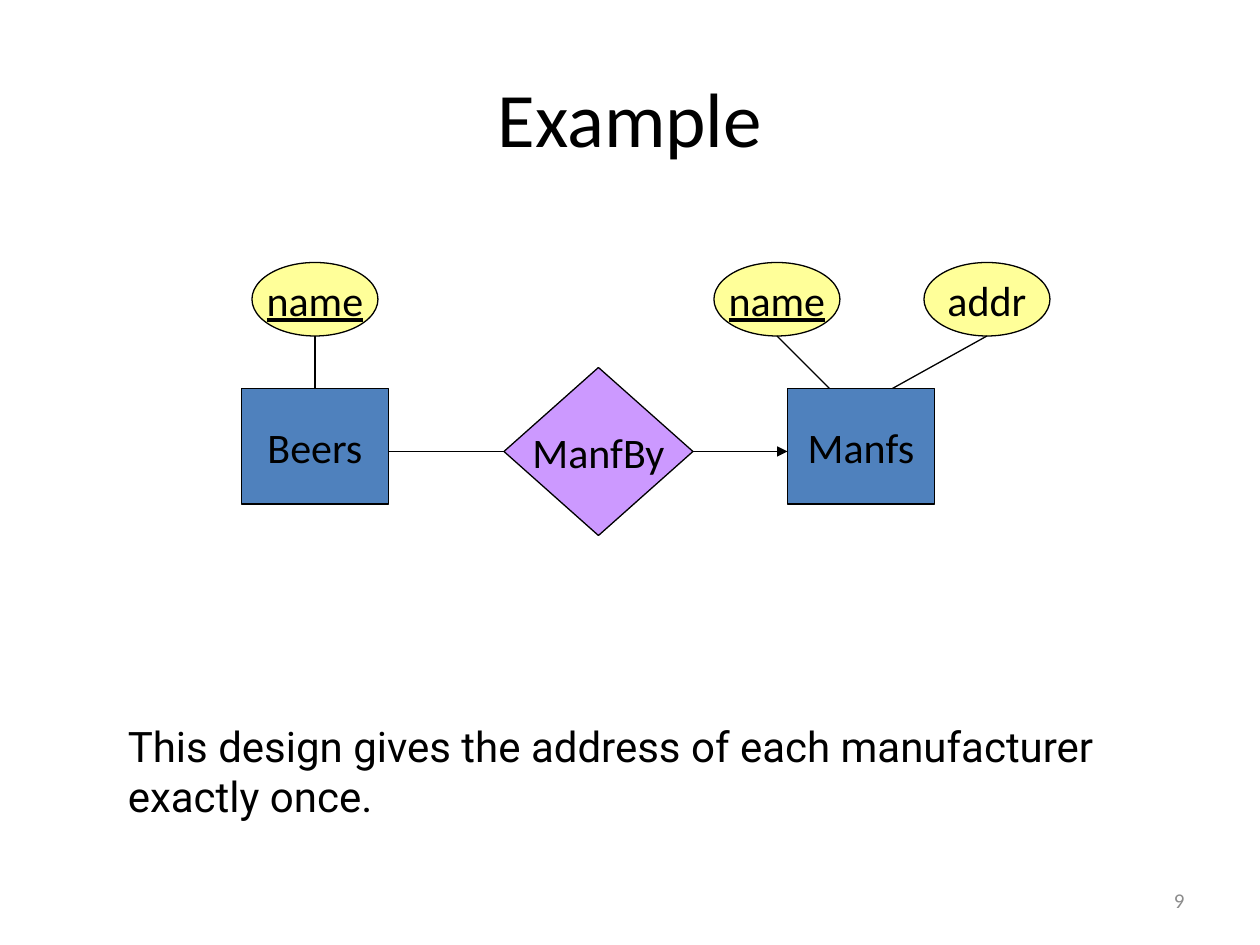
"""Build the Beers and Manfs entity-relationship example slide."""
from lxml import etree
from pptx import Presentation
from pptx import util as u
from pptx.dml.color import RGBColor
from pptx.enum import shapes, text
from pptx.oxml import ns

PX = 9525
KIND = shapes.MSO_SHAPE
ALIGN = text.PP_ALIGN


def rgb(value):
    return RGBColor.from_string(value)


def write(sp, words, size=24, font="Calibri", color="000000", align=ALIGN.CENTER,
          anchor=text.MSO_ANCHOR.MIDDLE, wrap=True, underline=None):
    tf = sp.text_frame
    tf.word_wrap = wrap
    tf.vertical_anchor = anchor
    p = tf.paragraphs[0]
    p.alignment = align
    r = p.add_run()
    r.text = words
    r.font.size = u.Pt(size)
    r.font.name = font
    r.font.color.rgb = rgb(color)
    r.font.underline = underline


prs = Presentation()
prs.slide_width, prs.slide_height = 960 * PX, 720 * PX
s = prs.slides.add_slide(prs.slide_layouts[6])

captions = [
    ("Example", (48, 29, 864, 120), dict(size=44)),
    ("This design gives the address of each manufacturer exactly once.",
     (88, 544, 808, 87),
     dict(font="Roboto", align=ALIGN.LEFT, anchor=text.MSO_ANCHOR.TOP)),
    ("9", (688, 667, 224, 38), dict(size=12, color="8C8C8C", align=ALIGN.RIGHT)),
]
for words, box, style in captions:
    sp = s.shapes.add_textbox(*(n * PX for n in box))
    write(sp, words, **style)

entity = (KIND.RECTANGLE, "4F81BD", 296, 112, 88)
relation = (KIND.DIAMOND, "CC99FF", 280, 144, 128)
attribute = (KIND.OVAL, "FFFF99", 200, 96, 56)
nodes = [
    ("Beers", 184, entity, None),
    ("Manfs", 600, entity, None),
    ("ManfBy", 384, relation, None),
    ("name", 192, attribute, True),
    ("name", 544, attribute, True),
    ("addr", 704, attribute, None),
]
for words, left, (kind, fill, top, width, height), key in nodes:
    sp = s.shapes.add_shape(kind, left * PX, top * PX, width * PX, height * PX)
    sp.shadow.inherit = False
    sp.fill.solid()
    sp.fill.fore_color.rgb = rgb(fill)
    sp.line.color.rgb = rgb("000000")
    sp.line.width = u.Pt(0.75)
    write(sp, words, wrap=False, underline=key)

links = [
    (384, 344, 296, 344, False),
    (528, 344, 600, 344, True),
    (240, 256, 240, 296, False),
    (592, 256, 632, 296, False),
    (752, 256, 680, 296, False),
]
for *ends, arrow in links:
    link = s.shapes.add_connector(shapes.MSO_CONNECTOR.STRAIGHT, *(n * PX for n in ends))
    link.line.color.rgb = rgb("000000")
    link.line.width = u.Pt(0.75)
    if arrow:
        etree.SubElement(link.line._get_or_add_ln(), ns.qn("a:tailEnd"), type="triangle")
    etree.SubElement(link._element.spPr, ns.qn("a:effectLst"))

prs.save("out.pptx")
